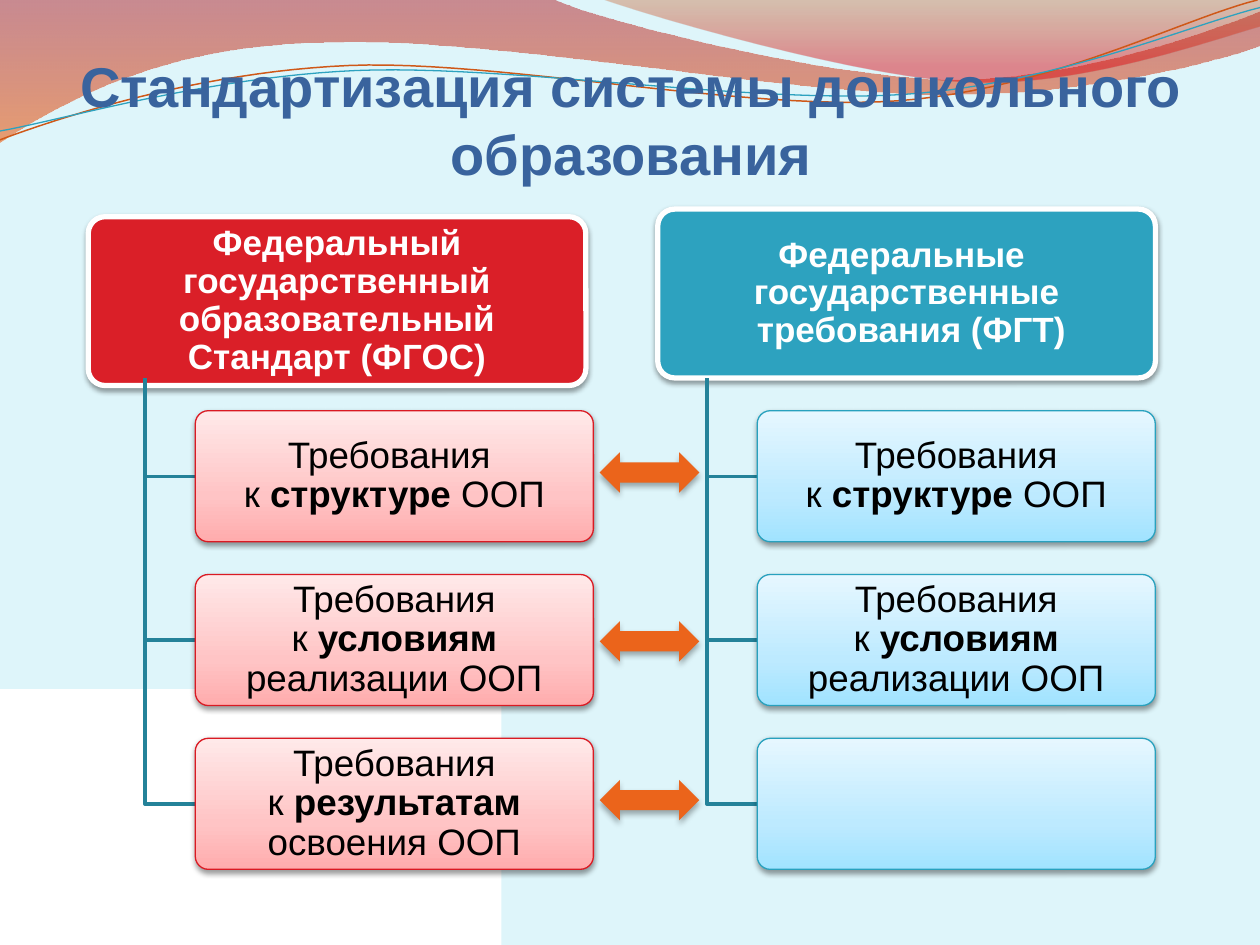
from lxml.etree import SubElement
from pptx import Presentation
from pptx.dml.color import RGBColor
from pptx.enum.shapes import MSO_SHAPE
from pptx.enum.text import MSO_ANCHOR, MSO_AUTO_SIZE, PP_ALIGN
from pptx.oxml.ns import qn
from pptx.util import Inches, Pt

# Grid of the two columns, in inches
HEADS = ((0.7, 1.72), (5.22, 1.66))
TRUNKS = (1.15, 5.61)
BRANCH, TRUNK_TOP = 0.4, 3.0
ROW_TOP, ROW_STEP = 3.26, 1.3
HEAD_SIZE, BOX_SIZE = (3.95, 1.34), (3.16, 1.04)
ARROW_TOPS = (3.59, 4.93, 6.19)

PINK = ((0, "FFACAD"), (35, "FFC4C5"), (100, "FFE9E9"))
BLUE = ((0, "A1E3FF"), (35, "BDEAFF"), (100, "E6F7FF"))
SOFT, DEEP = (38, 3.1, 1.6), (32, 3.5, 2.2)

# Text: paragraphs of (words, bold) runs; "\n" is a line break
COLUMNS = (
    ("DA1F28", PINK, "DA1A23",
     ("Федеральный государственный", " образовательный ", "Стандарт (ФГОС)"),
     ((("Требования \nк", False), (" структуре", True), (" ООП", False)),
      (("Требования\nк", False), (" условиям", True),
       (" реализации ООП", False)),
      (("Требования\nк ", False), ("результатам", True),
       (" освоения ООП", False)))),
    ("2DA2BF", BLUE, "28A1BE",
     ("Федеральные ", "государственные", " требования (ФГТ)"),
     ((("Требования\nк ", False), ("структуре", True), (" ООП", False)),
      (("Требования\nк", False), (" условиям", True),
       (" реализации ООП", False)),
      ())),
)

# Waves: start point, then lines (2 numbers) and curves (6 numbers)
WAVES = (
    ((0, 0), ((4.4, 0), (4.76, 0.17, 6.64, 0.63, 7.58, 0.63),
              (8.53, 0.63, 9.58, 0.26, 10, 0.09), (10, 0.36),
              (9.83, 0.44, 8.7, 0.76, 7.46, 0.75),
              (6.22, 0.75, 3.82, 0.28, 2.57, 0.34),
              (1.29, 0.35, 0.46, 0.83, 0, 1.13)),
     ((0, "AF0911", 45), (100, "EE5300", 55))),
    ((4.79, 0), ((5.09, 0.11, 6.82, 0.62, 7.69, 0.65),
                 (8.56, 0.69, 9.61, 0.32, 10, 0.21), (10, 0)),
     ((0, "C24400", 30), (80, "DC000B", 45))),
)
STRANDS = (
    ((0, 1.11), ((0.48, 0.93, 1.58, 0.57, 2.77, 0.52),
                 (3.95, 0.47, 5.93, 0.89, 7.13, 0.8),
                 (8.33, 0.71, 9.38, 0.15, 9.98, 0)), "CF5818", 0.85),
    ((0, 1.04), ((0.47, 0.96, 1.64, 0.61, 2.83, 0.56),
                 (4.03, 0.51, 5.97, 0.83, 7.17, 0.75),
                 (8.36, 0.67, 9.41, 0.21, 10, 0.06)), "2DA2BF", 0.75),
)


def rgb(code):
    return RGBColor.from_string(code)


def paint(shape, fill=None, line=None, width=0.75):
    shape.shadow.inherit = False
    if fill:
        shape.fill.solid()
        shape.fill.fore_color.rgb = rgb(fill)
    else:
        shape.fill.background()
    if line:
        shape.line.color.rgb = rgb(line)
        shape.line.width = Pt(width)
    else:
        shape.line.fill.background()


def tint(node, code, alpha=100):
    color = SubElement(node, qn("a:srgbClr"), val=code)
    if alpha < 100:
        SubElement(color, qn("a:alpha"), val=str(alpha * 1000))


def blend(shape, stops, angle):
    """Gradient fill; the angle runs counter-clockwise."""
    shape.fill.gradient()
    shape.fill.gradient_angle = angle
    group = next(shape.element.iter(qn("a:gsLst")))
    for old in list(group):
        group.remove(old)
    for place, *color in stops:
        tint(SubElement(group, qn("a:gs"), pos=str(place * 1000)), *color)


def shade(shape, alpha, blur, dist):
    effect = next(shape.element.iter(qn("a:effectLst")))
    outer = SubElement(effect, qn("a:outerShdw"), blurRad=str(Pt(blur)),
                       dist=str(Pt(dist)), dir="5400000", rotWithShape="0")
    tint(outer, "000000", alpha)


def trace(slide, start, steps, close=False):
    """Outline of lines and cubic curves, each curve cut into 24 pieces."""
    points = [start]
    for step in steps:
        if len(step) == 2:
            points.append(step)
            continue
        knots = (points[-1], step[:2], step[2:4], step[4:])
        for i in range(1, 25):
            t = i / 24
            u = 1 - t
            mix = (u ** 3, 3 * u * u * t, 3 * u * t * t, t ** 3)
            points.append(tuple(sum(m * k[axis] for m, k in zip(mix, knots))
                                for axis in (0, 1)))
    dots = [(Inches(x), Inches(y)) for x, y in points]
    pen = slide.shapes.build_freeform(*dots[0])
    pen.add_line_segments(dots[1:], close=close)
    return pen.convert_to_shape()


def block(slide, kind, *box):
    return slide.shapes.add_shape(kind, *map(Inches, box))


def write(shape, paras, size, color, inset, space=0.9):
    frame = shape.text_frame
    frame.word_wrap = True
    frame.vertical_anchor = MSO_ANCHOR.MIDDLE
    frame.margin_left = frame.margin_right = Inches(inset)
    frame.margin_top = frame.margin_bottom = Inches(inset - 0.01)
    for i, runs in enumerate(paras):
        para = frame.add_paragraph() if i else frame.paragraphs[0]
        para.alignment = PP_ALIGN.CENTER
        para.line_spacing = space
        for words, bold in runs:
            for j, part in enumerate(words.split("\n")):
                if j:
                    para.add_line_break()
                run = para.add_run()
                run.text = part
                font = run.font
                font.name, font.size, font.bold = "Arial", Pt(size), bold
                font.color.rgb = rgb(color)


def card(slide, spot, size, fill, line, width):
    shape = block(slide, MSO_SHAPE.ROUNDED_RECTANGLE, *spot, *size)
    shape.adjustments[0] = 0.1
    paint(shape, fill, line, width)
    shade(shape, *SOFT)
    return shape


def backdrop(slide):
    slide.background.fill.solid()
    slide.background.fill.fore_color.rgb = rgb("DEF5FA")
    for start, steps, stops in WAVES:
        wave = trace(slide, start, steps, close=True)
        paint(wave)
        blend(wave, stops, 270)
    for start, steps, color, width in STRANDS:
        paint(trace(slide, start, steps), line=color, width=width)
    paint(block(slide, MSO_SHAPE.RECTANGLE, 0, 5.47, 3.98, 2.03), "FFFFFF")


def heading(slide):
    title = slide.shapes.title
    title.left, title.top, title.width, title.height = map(
        Inches, (0.47, 0.23, 9.08, 1.25))
    write(title, [[("Стандартизация системы дошкольного образования", True)]],
          32, "39639D", 0, 1.0)
    frame = title.text_frame
    frame.auto_size = MSO_AUTO_SIZE.NONE
    frame.vertical_anchor = MSO_ANCHOR.BOTTOM
    frame.margin_top, frame.margin_bottom = Inches(0.05), 0
    # Bring the title in front of the backdrop
    title.element.getparent().append(title.element)


def column(slide, spot, trunk, fill, stops, edge, lines, rows):
    head = card(slide, spot, HEAD_SIZE, fill, "FFFFFF", 3)
    write(head, [[(line, True)] for line in lines], 20, "FFFFFF", 0.08)
    left = trunk + BRANCH
    for i, runs in enumerate(rows):
        top = ROW_TOP + i * ROW_STEP
        mid = top + BOX_SIZE[1] / 2
        elbow = trace(slide, (trunk, TRUNK_TOP), ((trunk, mid), (left, mid)))
        paint(elbow, line="248299", width=2)
        box = card(slide, (left, top), BOX_SIZE, None, edge, 0.75)
        blend(box, stops, 90)
        if runs:
            write(box, [runs], 21, "000000", 0.07)


def main():
    deck = Presentation()
    deck.slide_width, deck.slide_height = Inches(10), Inches(7.5)
    slide = deck.slides.add_slide(deck.slide_layouts[5])
    backdrop(slide)
    heading(slide)
    for spot, trunk, parts in zip(HEADS, TRUNKS, COLUMNS):
        column(slide, spot, trunk, *parts)
    # Arrows between the matching rows
    for top in ARROW_TOPS:
        arrow = block(slide, MSO_SHAPE.LEFT_RIGHT_ARROW, 4.76, top, 0.79, 0.32)
        paint(arrow, "EB641B")
        shade(arrow, *DEEP)
    deck.save("out.pptx")


if __name__ == "__main__":
    main()
